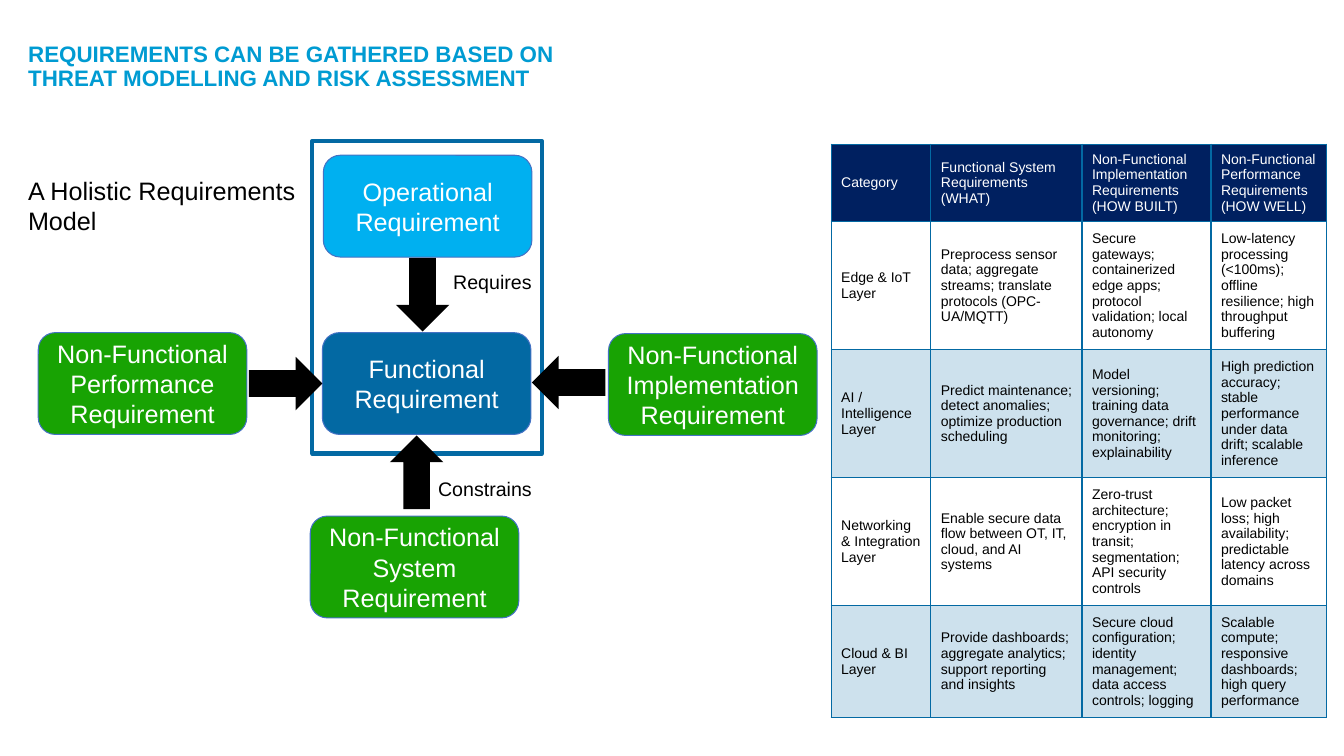
from lxml.etree import SubElement
from pptx import Presentation
from pptx.dml.color import RGBColor
from pptx.enum.shapes import MSO_SHAPE as Kind
from pptx.enum.text import MSO_ANCHOR as Anchor, PP_ALIGN as Align
from pptx.oxml.ns import qn
from pptx.util import Inches, Pt

WHITE = RGBColor(0xFF, 0xFF, 0xFF)
BLACK = RGBColor(0, 0, 0)
TITLE = RGBColor(0x00, 0x9B, 0xD2)
SKY = RGBColor(0x00, 0xB0, 0xF0)
BLUE = RGBColor(0x03, 0x69, 0xA3)
GREEN = RGBColor(0x18, 0xA3, 0x03)
EDGE = RGBColor(0x44, 0x72, 0xC4)
NAVY = RGBColor(0x00, 0x20, 0x60)
BAND = RGBColor(0xCD, 0xE1, 0xED)

NODES = [
    (2.83, 0.14, SKY, "Operational Requirement"),
    (2.82, 1.9, BLUE, "Functional Requirement"),
    (0, 1.9, GREEN, "Non-Functional Performance Requirement"),
    (5.66, 1.91, GREEN, "Non-Functional Implementation\vRequirement"),
    (2.7, 3.72, GREEN, "Non-Functional System Requirement"),
]
ARROWS = [(3.55, 1.16, 0), (3.49, 2.92, 180), (2.19, 2.04, 270), (5, 2.03, 90)]
LABELS = [
    (-0.2, 0.29, 0.71, 18, "A Holistic Requirements Model"),
    (4.02, 1.23, 0.34, 14, "Requires"),
    (3.87, 3.28, 0.34, 14, "Constrains"),
]
COLS = [0.99, 1.5, 1.28, 1.15]
ROWS = [0.77, 1.27, 1.27, 1.27, 1.11]
CELLS = [
    ["Category",
     "Functional System Requirements (WHAT)",
     "Non-Functional Implementation Requirements (HOW BUILT)",
     "Non-Functional Performance Requirements (HOW WELL)"],
    ["Edge & IoT Layer",
     "Preprocess sensor data; aggregate streams; translate protocols (OPC-UA/MQTT)",
     "Secure gateways; containerized edge apps; protocol validation; local autonomy",
     "Low-latency processing (<100ms); offline resilience; high throughput buffering"],
    ["AI / Intelligence Layer",
     "Predict maintenance; detect anomalies; optimize production scheduling",
     "Model versioning; training data governance; drift monitoring; explainability",
     "High prediction accuracy; stable performance under data drift; scalable inference"],
    ["Networking & Integration Layer",
     "Enable secure data flow between OT, IT, cloud, and AI systems",
     "Zero-trust architecture; encryption in transit; segmentation; API security controls",
     "Low packet loss; high availability; predictable latency across domains"],
    ["Cloud & BI Layer",
     "Provide dashboards; aggregate analytics; support reporting and insights",
     "Secure cloud configuration; identity management; data access controls; logging",
     "Scalable compute; responsive dashboards; high query performance"],
]


def write(frame, text, size, color, align=Align.LEFT, bold=False):
    frame.text = text
    frame.word_wrap = True
    for para in frame.paragraphs:
        para.alignment = align
        font = para.font
        font.name, font.size, font.bold = "Arial", Pt(size), bold
        font.color.rgb = color


def add_shape(slide, kind, box, fill=None, line=None, width=0.75):
    shape = slide.shapes.add_shape(kind, *map(Inches, box))
    shape.shadow.inherit = False
    if fill is None:
        shape.fill.background()
    else:
        shape.fill.solid()
        shape.fill.fore_color.rgb = fill
    if line is None:
        shape.line.fill.background()
    else:
        shape.line.color.rgb = line
        shape.line.width = Pt(width)
    return shape


def add_title(slide, left, top, width, height):
    title = slide.shapes.title
    title.left, title.top = Inches(left), Inches(top)
    title.width, title.height = Inches(width), Inches(height)
    frame = title.text_frame
    write(frame, "REQUIREMENTS CAN BE GATHERED BASED ON\n"
          "THREAT MODELLING AND RISK ASSESSMENT", 16, TITLE, bold=True)
    frame.vertical_anchor = Anchor.TOP
    frame.margin_left = frame.margin_right = Inches(0.1)
    frame.margin_top = frame.margin_bottom = Inches(0.1)
    for para in frame.paragraphs:
        para.line_spacing = 0.9
        para.space_before = Pt(0)


def add_model(slide, left, top):
    add_shape(slide, Kind.RECTANGLE, (left + 2.72, top, 2.28, 3.1), None, BLUE, 3)
    for x, y, fill, text in NODES:
        node = add_shape(slide, Kind.ROUNDED_RECTANGLE,
                         (left + x, top + y, 2.07, 1.01), fill, EDGE)
        write(node.text_frame, text, 18, WHITE, Align.CENTER)
        node.text_frame.vertical_anchor = Anchor.MIDDLE
    for x, y, turn in ARROWS:
        arrow = add_shape(slide, Kind.DOWN_ARROW, (left + x, top + y, 0.53, 0.73), BLACK)
        arrow.rotation = turn
    for x, y, height, size, text in LABELS:
        label = slide.shapes.add_textbox(
            *map(Inches, (left + x, top + y, 3, height)))
        write(label.text_frame, text, size, BLACK)


def add_border(cell):
    props = cell._tc.get_or_add_tcPr()
    for side in ("lnL", "lnR", "lnT", "lnB"):
        line = SubElement(props, qn("a:" + side), w=str(Pt(1)))
        fill = SubElement(line, qn("a:solidFill"))
        SubElement(fill, qn("a:srgbClr"), val=str(BLUE))


def add_grid(slide, left, top):
    box = map(Inches, (left, top, sum(COLS), sum(ROWS)))
    table = slide.shapes.add_table(len(ROWS), len(COLS), *box).table
    for col, width in zip(table.columns, COLS):
        col.width = Inches(width)
    for r, height in enumerate(ROWS):
        table.rows[r].height = Inches(height)
        for c, text in enumerate(CELLS[r]):
            cell = table.cell(r, c)
            write(cell.text_frame, text, 10, BLACK if r else WHITE)
            cell.vertical_anchor = Anchor.MIDDLE
            add_border(cell)
            if r % 2:
                cell.fill.background()
            else:
                cell.fill.solid()
                cell.fill.fore_color.rgb = BAND if r else NAVY


def main():
    deck = Presentation()
    deck.slide_width, deck.slide_height = Inches(13.34), Inches(7.5)
    slide = deck.slides.add_slide(deck.slide_layouts[5])
    add_title(slide, 0.18, 0.33, 12.43, 0.84)
    add_model(slide, 0.38, 1.4)
    add_grid(slide, 8.25, 1.43)
    deck.save("out.pptx")


if __name__ == "__main__":
    main()
